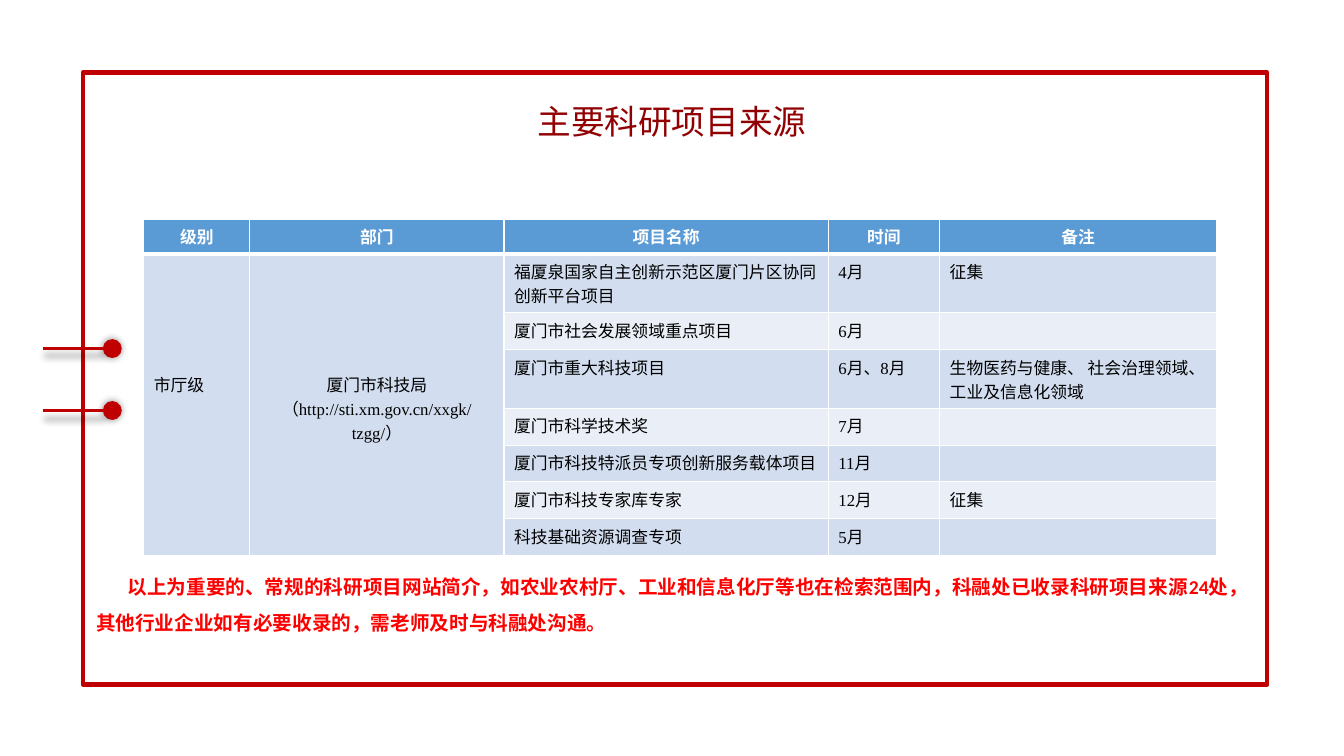
from lxml import etree
from pptx import Presentation
from pptx import util as u
from pptx.dml import color
from pptx.enum import shapes, text
from pptx.oxml import ns

RED = "C00000"
CJK = "Noto Sans CJK SC"
SERIF = "Times New Roman"
HEADS = ["级别", "部门", "项目名称", "时间", "备注"]
COLS = [101, 242, 309, 106, 264]
ROWS = [31, 56, 35, 56, 35, 35, 35, 35]
PROJECTS = [
    ("福厦泉国家自主创新示范区厦门片区协同创新平台项目", "4月", "征集"),
    ("厦门市社会发展领域重点项目", "6月", ""),
    ("厦门市重大科技项目", "6月、8月", "生物医药与健康、 社会治理领域、工业及信息化领域"),
    ("厦门市科学技术奖", "7月", ""),
    ("厦门市科技特派员专项创新服务载体项目", "11月", ""),
    ("厦门市科技专家库专家", "12月", "征集"),
    ("科技基础资源调查专项", "5月", ""),
]
LEVEL = "市厅级"
DEPARTMENT = "厦门市科技局\n（http://sti.xm.gov.cn/xxgk/tzgg/）"
NOTE = (
    "以上为重要的、常规的科研项目网站简介，如农业农村厅、工业和信息化厅等也在检索范围内，科融处已收录科研项目来源24处，\n"
    "其他行业企业如有必要收录的，需老师及时与科融处沟通。"
)


def px(n):
    return u.Emu(n * 9525)


def rgb(value):
    return color.RGBColor.from_string(value)


def sub(parent, tag, **attrs):
    return etree.SubElement(parent, ns.qn(tag), attrs)


def place(shape, x, y, w, h):
    shape.left, shape.top, shape.width, shape.height = px(x), px(y), px(w), px(h)


def style(tf, size, font, value, align, bold=False, spacing=None):
    for p in tf.paragraphs:
        p.alignment = align
        p.line_spacing = spacing
        for r in p.runs:
            r.font.size = u.Pt(size)
            r.font.name = font
            r.font.bold = bold
            r.font.color.rgb = rgb(value)
            sub(r.font._element, "a:ea", typeface=CJK)


def glow(sp):
    pr = sp._element.spPr
    for old in pr.findall(ns.qn("a:effectLst")):
        pr.remove(old)
    shadow = sub(sub(pr, "a:effectLst"), "a:outerShdw", blurRad="63500",
                 sx="102000", sy="102000", algn="ctr", rotWithShape="0")
    sub(sub(shadow, "a:srgbClr", val="000000"), "a:alpha", val="40000")


def add_frame(s):
    sp = s.shapes.add_shape(shapes.MSO_SHAPE.RECTANGLE, px(79), px(69), px(1128), px(583))
    sp.shadow.inherit = False
    sp.fill.background()
    sp.line.color.rgb = rgb(RED)
    sp.line.width = u.Pt(3)


def add_pin(s, y):
    dot = s.shapes.add_shape(shapes.MSO_SHAPE.OVAL, px(98), px(y - 9), px(18), px(18))
    dot.fill.solid()
    dot.fill.fore_color.rgb = rgb(RED)
    dot.line.fill.background()
    glow(dot)
    line = s.shapes.add_connector(shapes.MSO_CONNECTOR.STRAIGHT, px(98), px(y), px(41), px(y))
    line.line.color.rgb = rgb(RED)
    line.line.width = u.Pt(2.25)
    glow(line)


def add_title(s):
    title = s.shapes.title
    place(title, 226, 95, 828, 45)
    title.text_frame.text = "主要科研项目来源"
    style(title.text_frame, 24, CJK, "910103", text.PP_ALIGN.CENTER, spacing=0.9)


def set_borders(cell, widths):
    pr = cell._tc.get_or_add_tcPr()
    for index, (side, width) in enumerate(widths.items()):
        ln = etree.Element(ns.qn("a:" + side), {"w": str(u.Pt(width))})
        sub(sub(ln, "a:solidFill"), "a:srgbClr", val="FFFFFF")
        pr.insert(index, ln)


def fill_cell(cell, value, row, font=SERIF, align=text.PP_ALIGN.LEFT):
    head = row == 0
    cell.fill.solid()
    cell.fill.fore_color.rgb = rgb("5B9BD5" if head else "D2DEEF" if row % 2 else "EAEFF7")
    set_borders(cell, {"lnL": 1, "lnR": 1, "lnT": 3 if row == 1 else 1, "lnB": 3 if head else 1})
    cell.text_frame.text = value
    if value:
        style(cell.text_frame, 12, font, "FFFFFF" if head else "000000", align, bold=head)
    else:
        cell.text_frame.paragraphs[0].font.size = u.Pt(12)


def add_projects(s):
    table = s.shapes.add_table(len(ROWS), len(COLS), px(137), px(209),
                               px(sum(COLS)), px(sum(ROWS))).table
    for column, width in zip(table.columns, COLS):
        column.width = px(width)
    for row, height in zip(table.rows, ROWS):
        row.height = px(height)
    for c, head in enumerate(HEADS):
        fill_cell(table.cell(0, c), head, 0, align=text.PP_ALIGN.CENTER)
    for r, project in enumerate(PROJECTS, 1):
        for c, value in enumerate(project, 2):
            fill_cell(table.cell(r, c), value, r, "Calibri" if c == 2 else SERIF)
    sides = [(LEVEL, text.PP_ALIGN.LEFT), (DEPARTMENT, text.PP_ALIGN.CENTER)]
    for c, (value, align) in enumerate(sides):
        cell = table.cell(1, c)
        cell.merge(table.cell(len(PROJECTS), c))
        fill_cell(cell, value, 1, align=align)
        cell.margin_top = px(112)


def add_note(s):
    tf = s.shapes.add_textbox(px(82), px(532), px(1132), px(78)).text_frame
    tf.word_wrap = True
    tf.text = NOTE
    style(tf, 14, "Calibri", "FF0000", text.PP_ALIGN.JUSTIFY, bold=True, spacing=1.5)
    tf.paragraphs[0]._p.get_or_add_pPr().set("indent", str(px(30)))


def main():
    prs = Presentation()
    prs.slide_width, prs.slide_height = px(1280), px(720)
    s = prs.slides.add_slide(prs.slide_layouts[5])
    add_frame(s)
    for y in (332, 391):
        add_pin(s, y)
    add_title(s)
    add_projects(s)
    add_note(s)
    prs.save("out.pptx")


if __name__ == "__main__":
    main()
